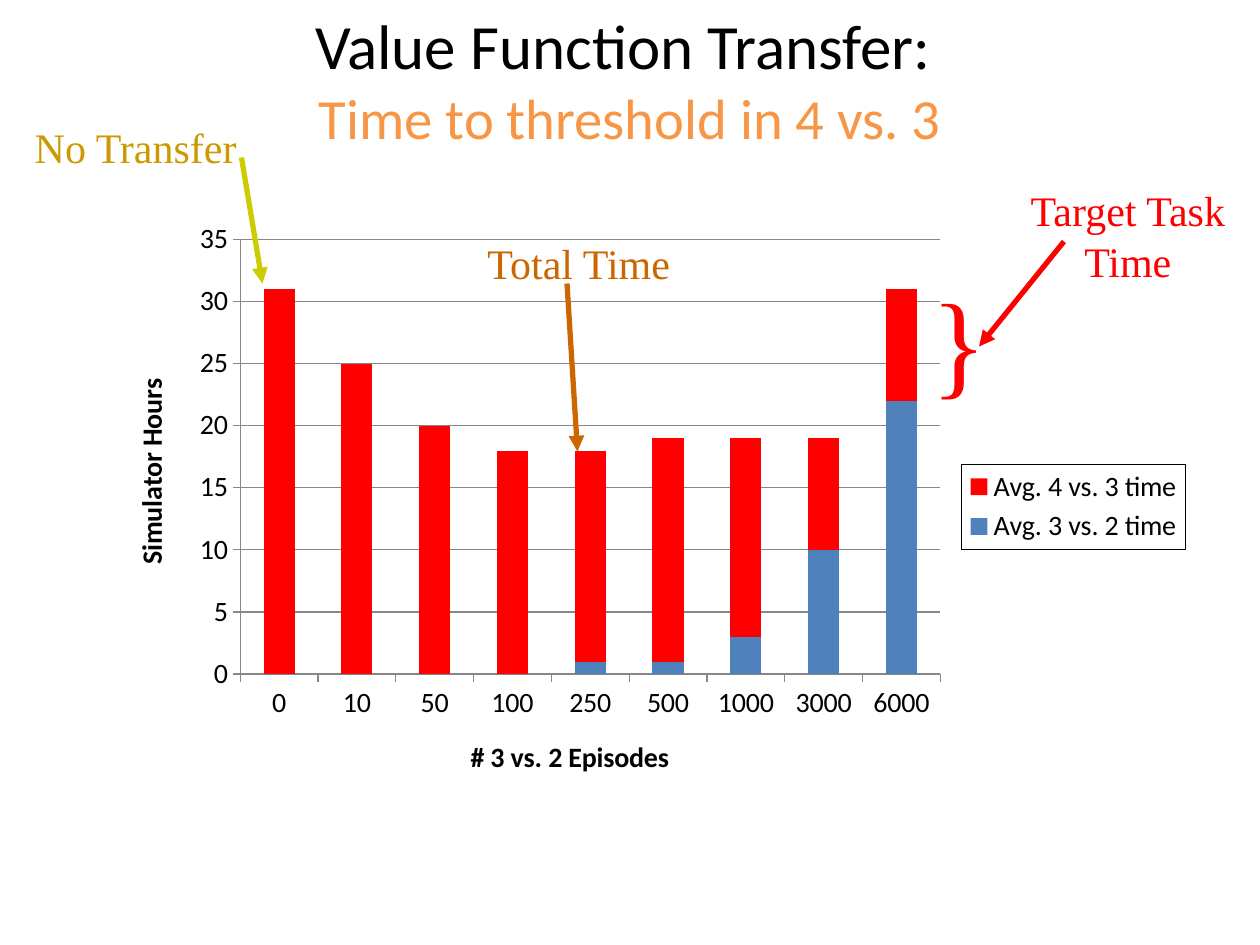
import pptx
import pptx.chart.data
import pptx.dml.color
import pptx.enum.chart
import pptx.enum.shapes
import pptx.enum.text
import pptx.oxml
import pptx.oxml.ns
import pptx.util
from dataclasses import dataclass

Pt = pptx.util.Pt
qn = pptx.oxml.ns.qn
NAMESPACES = pptx.oxml.ns.nsdecls("a", "c")
CHART_WIDTH, CHART_HEIGHT = 623.5, 340


@dataclass(frozen=True)
class Theme:
    heading_font: str = "Calibri"
    note_font: str = "Times New Roman"
    black: str = "000000"
    subtitle: str = "F79646"
    source_task: str = "4F81BD"
    target_task: str = "FF0000"
    total: str = "CC6600"
    no_transfer: str = "CC9900"
    no_transfer_arrow: str = "CCCC00"
    grid: str = "868686"
    title_size: float = 36
    subtitle_size: float = 32.4
    note_size: float = 24
    brace_size: float = 66
    chart_size: float = 16
    arrow_width: float = 3


def rgb(value):
    return pptx.dml.color.RGBColor.from_string(value)


def apply(target, values):
    for name, value in values.items():
        setattr(target, name, value)


def format_font(font, name, size, color, bold=False):
    apply(font, {"name": name, "size": Pt(size), "bold": bold})
    font.color.rgb = rgb(color)


def format_line(line, color, width):
    line.color.rgb = rgb(color)
    line.width = Pt(width)


def set_layout(element, after, left, top, width=None, height=None, inner=False):
    """Fix a chart part in points from the chart's top left corner."""
    for old in element.findall(qn("c:layout")):
        element.remove(old)
    settings = [("layoutTarget", "inner")] if inner else []
    settings += [("xMode", "edge"), ("yMode", "edge"),
                 ("x", left / CHART_WIDTH), ("y", top / CHART_HEIGHT)]
    if width:
        settings += [("w", width / CHART_WIDTH), ("h", height / CHART_HEIGHT)]
    body = "".join(f'<c:{tag} val="{value}"/>' for tag, value in settings)
    layout = pptx.oxml.parse_xml(
        f"<c:layout {NAMESPACES}><c:manualLayout>{body}</c:manualLayout></c:layout>")
    if after:
        element.find(qn(after)).addnext(layout)
    else:
        element.insert(0, layout)


class SlideBuilder:
    def __init__(self, page, theme):
        self.page = page
        self.theme = theme

    def title(self, lines, left, top, width, height):
        box = self.page.shapes.title
        apply(box, {"left": Pt(left), "top": Pt(top),
                    "width": Pt(width), "height": Pt(height)})
        apply(box.text_frame, {"word_wrap": True,
                               "vertical_anchor": pptx.enum.text.MSO_ANCHOR.MIDDLE})
        para = box.text_frame.paragraphs[0]
        para.alignment = pptx.enum.text.PP_ALIGN.CENTER
        for index, (text, size, color) in enumerate(lines):
            if index:
                para.add_line_break()
            span = para.add_run()
            span.text = text
            format_font(span.font, self.theme.heading_font, size, color)

    def note(self, text, left, top, width, height, color, size=None, wrap=False):
        box = self.page.shapes.add_textbox(Pt(left), Pt(top), Pt(width), Pt(height))
        box.text_frame.word_wrap = wrap
        para = box.text_frame.paragraphs[0]
        para.alignment = pptx.enum.text.PP_ALIGN.CENTER
        span = para.add_run()
        span.text = text
        format_font(span.font, self.theme.note_font, size or self.theme.note_size, color)

    def arrow(self, start, end, color):
        line = self.page.shapes.add_connector(
            pptx.enum.shapes.MSO_CONNECTOR.STRAIGHT, *map(Pt, start + end))
        format_line(line.line, color, self.theme.arrow_width)
        line.line._get_or_add_ln().append(
            pptx.oxml.parse_xml(f'<a:tailEnd {NAMESPACES} type="triangle"/>'))
        line._element.spPr.append(pptx.oxml.parse_xml(f"<a:effectLst {NAMESPACES}/>"))

    def axis(self, axis, title, left, top):
        theme = self.theme
        axis.major_tick_mark = pptx.enum.chart.XL_TICK_MARK.OUTSIDE
        axis.minor_tick_mark = pptx.enum.chart.XL_TICK_MARK.NONE
        format_line(axis.format.line, theme.grid, 0.75)
        frame = axis.axis_title.text_frame
        frame.text = title
        format_font(frame.paragraphs[0].runs[0].font, theme.heading_font,
                    theme.chart_size, theme.black, bold=True)
        set_layout(axis.axis_title._element, "c:tx", left, top)

    def stacked_chart(self, categories, series, left, top):
        theme = self.theme
        data = pptx.chart.data.CategoryChartData()
        data.categories = categories
        for name, values, _ in series:
            data.add_series(name, values)
        chart = self.page.shapes.add_chart(
            pptx.enum.chart.XL_CHART_TYPE.COLUMN_STACKED,
            Pt(left), Pt(top), Pt(CHART_WIDTH), Pt(CHART_HEIGHT), data).chart
        format_font(chart.font, theme.heading_font, theme.chart_size, theme.black)
        chart.has_title = False

        # Columns
        plot = chart.plots[0]
        apply(plot, {"gap_width": 150, "overlap": 100, "vary_by_categories": False})
        for bars, (_, _, color) in zip(plot.series, series):
            bars.format.fill.solid()
            bars.format.fill.fore_color.rgb = rgb(color)
        set_layout(chart._chartSpace.chart.plotArea, None,
                   77.3, 16.8, 400, 248.5, inner=True)

        # Axes
        self.axis(chart.category_axis, "# 3 vs. 2 Episodes", 206, 298.6)
        self.axis(chart.value_axis, "Simulator Hours", 12.7, 93.5)
        apply(chart.value_axis, {"minimum_scale": 0, "maximum_scale": 35,
                                 "major_unit": 5, "has_major_gridlines": True})
        format_line(chart.value_axis.major_gridlines.format.line, theme.grid, 0.75)

        # Legend with a thin frame
        chart.has_legend = True
        apply(chart.legend, {"position": pptx.enum.chart.XL_LEGEND_POSITION.RIGHT,
                             "include_in_layout": False})
        legend = chart.legend._element
        set_layout(legend, "c:legendPos", 489.4, 145.3, 128, 48.6)
        legend.find(qn("c:overlay")).addnext(pptx.oxml.parse_xml(
            f'<c:spPr {NAMESPACES}><a:ln w="9525"><a:solidFill>'
            f'<a:srgbClr val="{theme.black}"/></a:solidFill></a:ln></c:spPr>'))


def main():
    theme = Theme()
    deck = pptx.Presentation()
    deck.slide_width, deck.slide_height = Pt(720), Pt(540)
    slide = SlideBuilder(deck.slides.add_slide(deck.slide_layouts[5]), theme)

    slide.title([("Value Function Transfer: ", theme.title_size, theme.black),
                 ("Time to threshold in 4 vs. 3", theme.subtitle_size, theme.subtitle)],
                12, 0, 696, 90)

    # Training time by number of source task episodes
    slide.stacked_chart(
        ["0", "10", "50", "100", "250", "500", "1000", "3000", "6000"],
        [("Avg. 3 vs. 2 time", [0, 0, 0, 0, 1, 1, 3, 10, 22], theme.source_task),
         ("Avg. 4 vs. 3 time", [31, 25, 20, 18, 17, 18, 16, 9, 9], theme.target_task)],
        60, 120)

    # Total time
    slide.arrow((324, 162), (330, 258), theme.total)
    slide.note("Total Time", 270, 132, 121.5, 36, theme.total)

    # No transfer
    slide.note("No Transfer", 12, 66, 131, 36, theme.no_transfer)
    slide.arrow((138, 90), (150, 162), theme.no_transfer_arrow)

    # Target task time
    slide.note("Target Task Time", 578, 102, 133, 65.5, theme.target_task, wrap=True)
    slide.arrow((608, 138), (559.5, 198), theme.target_task)
    slide.note("}", 524.5, 150, 47, 87, theme.target_task, theme.brace_size)

    deck.save("out.pptx")


if __name__ == "__main__":
    main()
